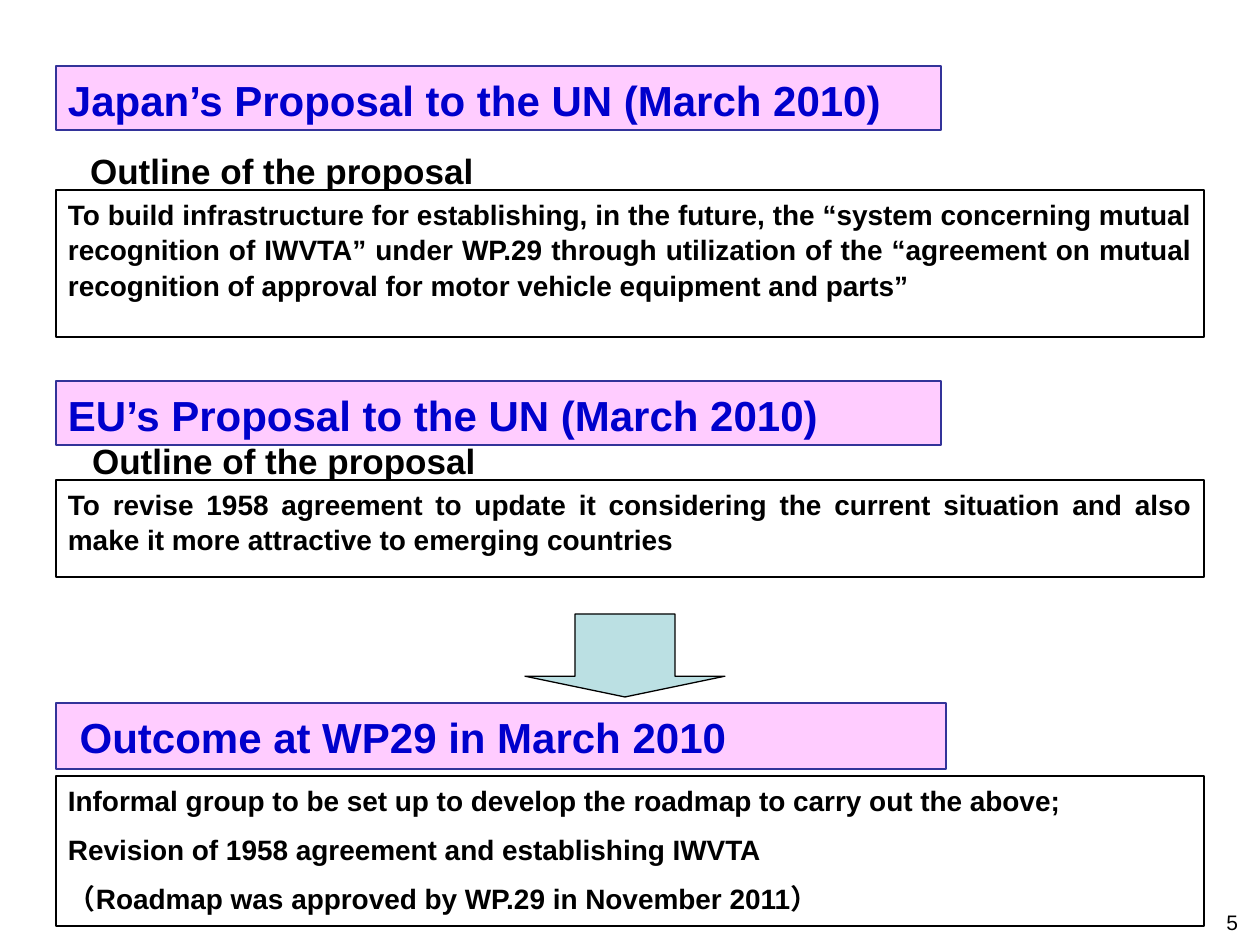
from pptx import Presentation
from pptx.dml.color import RGBColor
from pptx.enum.shapes import MSO_SHAPE
from pptx.enum.text import MSO_ANCHOR, PP_ALIGN
from pptx.util import Emu, Pt

PX = 914400 // 126
BLACK = RGBColor(0x00, 0x00, 0x00)
WHITE = RGBColor(0xFF, 0xFF, 0xFF)
PINK = RGBColor(0xFF, 0xCC, 0xFF)
INDIGO = RGBColor(0x33, 0x33, 0x99)
BLUE = RGBColor(0x00, 0x00, 0xCC)
TEAL = RGBColor(0xBB, 0xE0, 0xE3)

HEADING = {"name": "Arial", "size": Pt(24), "bold": True}
SUBTITLE = {"name": "Arial", "size": Pt(20), "bold": True}
BODY = {"name": "Arial", "size": Pt(16), "bold": True}
NUMBER = {"name": "Arial", "size": Pt(12), "bold": False}
FRAME = {
    "word_wrap": True,
    "vertical_anchor": MSO_ANCHOR.TOP,
    "margin_left": Emu(12 * PX),
    "margin_right": Emu(12 * PX),
    "margin_top": Emu(6 * PX),
    "margin_bottom": Emu(6 * PX),
}


def set_all(target, values):
    """Set each named attribute on the target."""
    for name, value in values.items():
        setattr(target, name, value)


def scale(box):
    """Turn a box in px into EMU."""
    return [Emu(length * PX) for length in box]


def write(shape, lines, font, color, align=PP_ALIGN.LEFT):
    """Fill a shape with one paragraph per line."""
    frame = shape.text_frame
    set_all(frame, FRAME)
    for index, line in enumerate(lines):
        para = frame.paragraphs[0] if index == 0 else frame.add_paragraph()
        spacing = {"alignment": align, "line_spacing": 1.05, "space_before": Pt(8 if index else 0)}
        set_all(para, spacing)
        span = para.add_run()
        span.text = line
        set_all(span.font, font)
        span.font.color.rgb = color


def add_panel(page, box, fill, line, weight, kind=MSO_SHAPE.RECTANGLE):
    """Draw a filled and outlined shape."""
    panel = page.shapes.add_shape(kind, *scale(box))
    panel.shadow.inherit = False
    panel.fill.solid()
    panel.fill.fore_color.rgb = fill
    panel.line.color.rgb = line
    panel.line.width = Pt(weight)
    return panel


def add_label(page, box, text, font, align):
    """Place a line of black text without a frame."""
    write(page.shapes.add_textbox(*scale(box)), [text], font, BLACK, align)


def add_heading(page, box, text, weight):
    """Place a pink heading bar."""
    write(add_panel(page, box, PINK, INDIGO, weight), [text], HEADING, BLUE)


def add_body(page, box, lines, align):
    """Place a white framed block of text."""
    write(add_panel(page, box, WHITE, BLACK, 1.5), lines, BODY, BLACK, align)


def add_proposal(page, box, title, outline, label_offset):
    """Place a proposal: heading bar, subtitle and outline block."""
    left, top, width, height = box
    label_left, label_top = label_offset
    body_top = label_top + 49
    add_heading(page, (left, top, 885, 64), title, 0.75)
    label = (left + label_left, top + label_top, 556, 54)
    add_label(page, label, "Outline of the proposal", SUBTITLE, PP_ALIGN.CENTER)
    body = (left, top + body_top, width, height - body_top)
    add_body(page, body, [outline], PP_ALIGN.JUSTIFY)


def add_outcome(page, box, title, lines):
    """Place the outcome: heading bar above its block of text."""
    left, top, width, height = box
    add_heading(page, (left, top, 890, 66), title, 1.5)
    add_body(page, (left, top + 73, width, height - 73), lines, PP_ALIGN.LEFT)


def main():
    """Build and save the deck."""
    deck = Presentation()
    deck.slide_width, deck.slide_height = scale((1260, 945))
    page = deck.slides.add_slide(deck.slide_layouts[6])
    add_label(page, (956, 902, 294, 52), "5", NUMBER, PP_ALIGN.RIGHT)
    add_proposal(
        page, (56, 66, 1148, 271),
        "Japan’s Proposal to the UN (March 2010)",
        "To build infrastructure for establishing, in the future, the “system concerning "
        "mutual recognition of IWVTA” under WP.29 through utilization of the “agreement on "
        "mutual recognition of approval for motor vehicle equipment and parts”",
        (-52, 75),
    )
    add_proposal(
        page, (56, 381, 1148, 196),
        "EU’s Proposal to the UN (March 2010)",
        "To revise 1958 agreement to update it considering the current situation and also "
        "make it more attractive to emerging countries",
        (-50, 50),
    )
    arrow = add_panel(page, (525, 614, 200, 83), TEAL, BLACK, 0.75, MSO_SHAPE.DOWN_ARROW)
    arrow.adjustments[0], arrow.adjustments[1] = 0.5, 0.25
    add_outcome(
        page, (56, 703, 1148, 223),
        " Outcome at WP29 in March 2010",
        [
            "Informal group to be set up to develop the roadmap to carry out the above;",
            "Revision of 1958 agreement and establishing IWVTA",
            "（Roadmap was approved by WP.29 in November 2011）",
        ],
    )
    deck.save("out.pptx")


if __name__ == "__main__":
    main()
